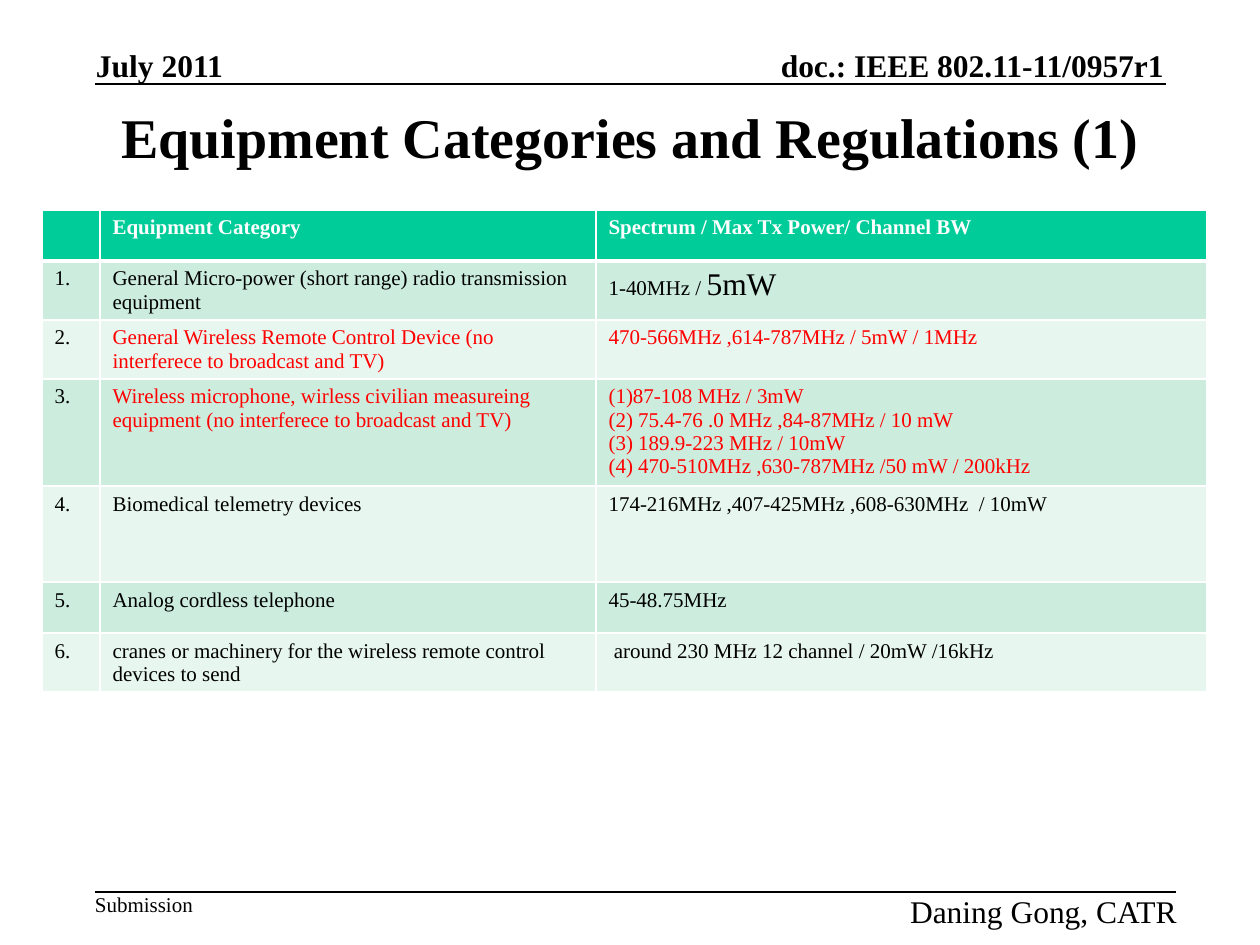
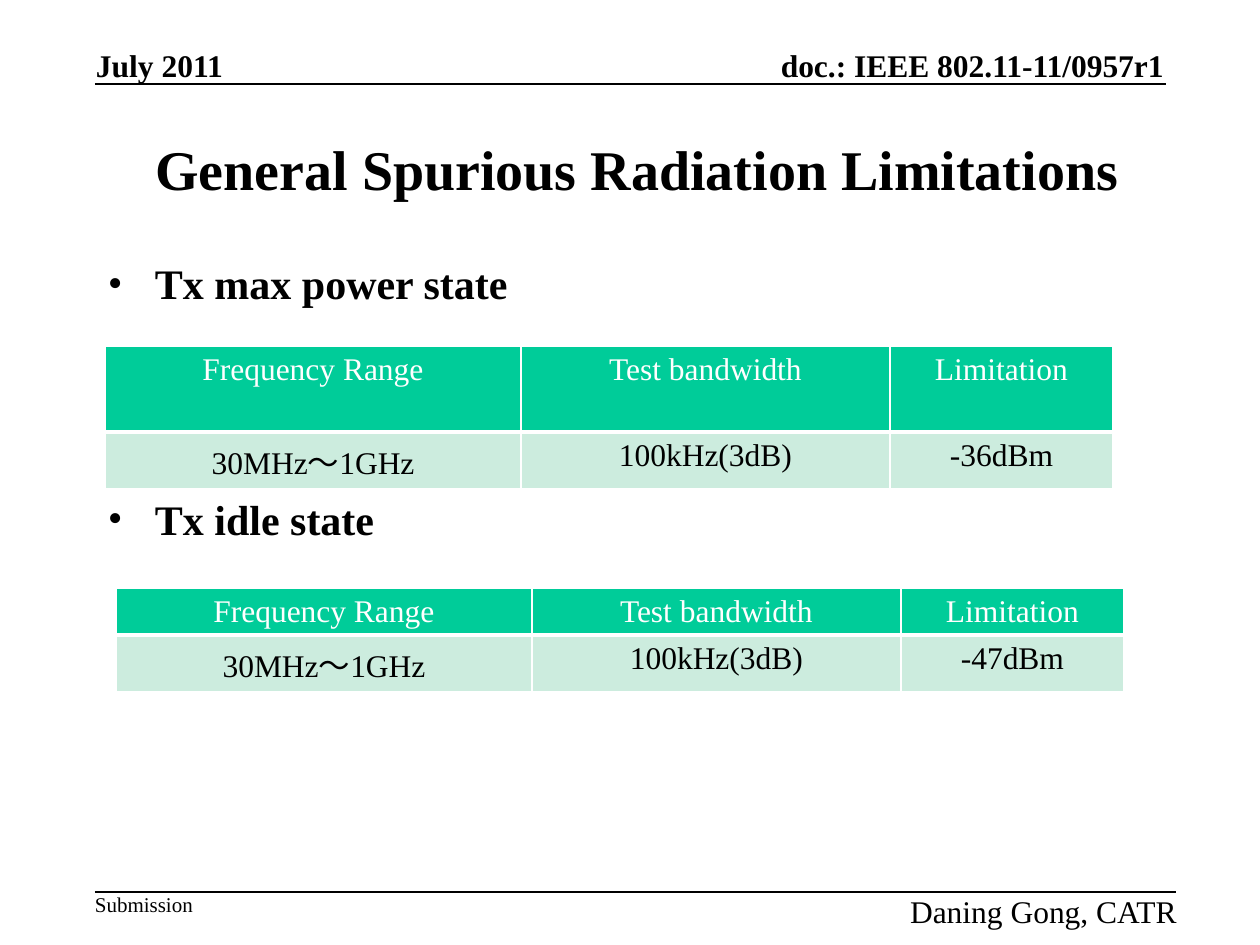
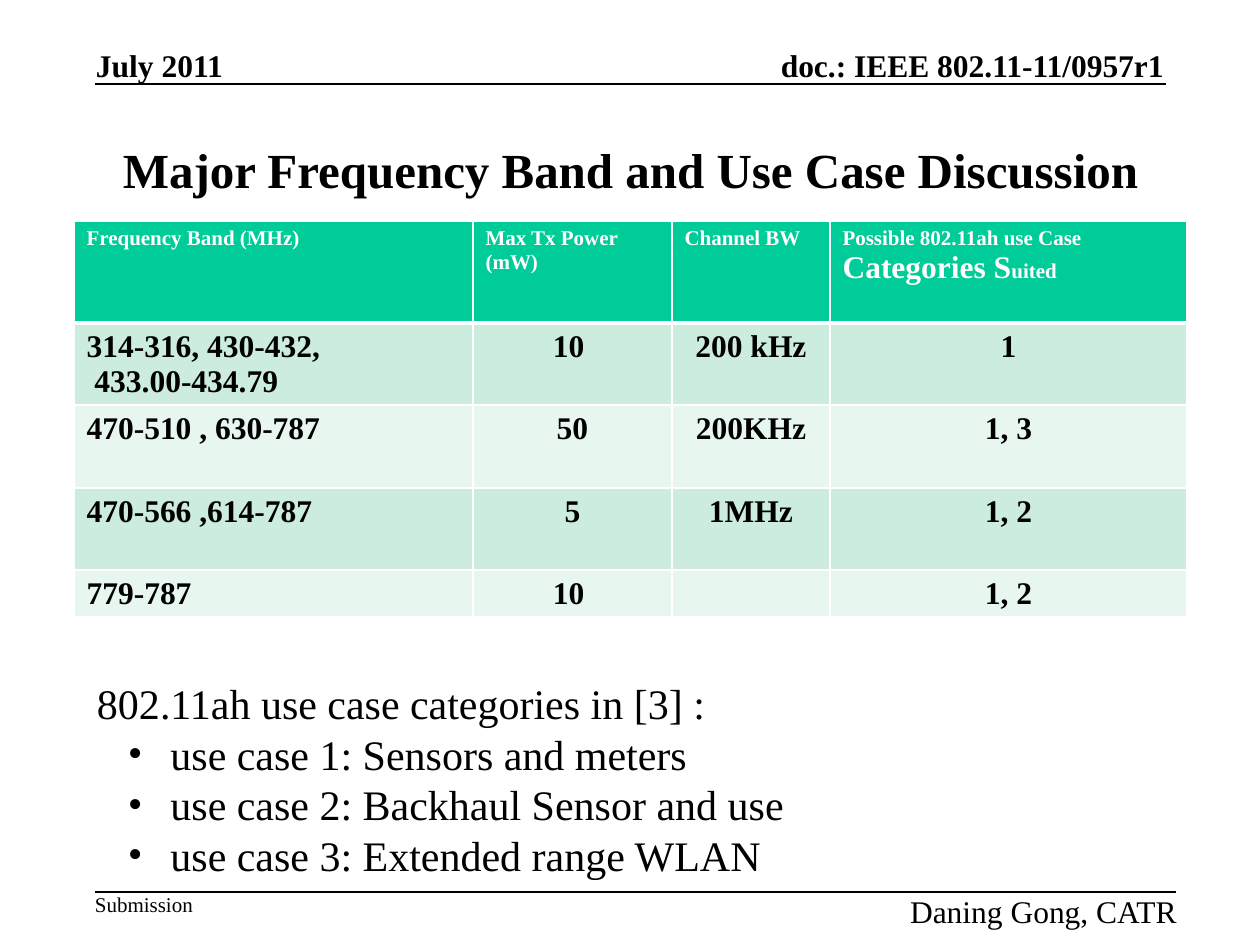
from itertools import product

from lxml import etree
from pptx import Presentation
from pptx.dml.color import RGBColor
from pptx.enum.shapes import MSO_CONNECTOR
from pptx.enum.text import MSO_ANCHOR as Anchor, PP_ALIGN as Align
from pptx.oxml.ns import qn
from pptx.util import Pt

PX = 914400 / 126
FONT = "Times New Roman"
BLACK = RGBColor(0x00, 0x00, 0x00)
WHITE = RGBColor(0xFF, 0xFF, 0xFF)
RED = RGBColor(0xFF, 0x00, 0x00)
GREEN = RGBColor(0x00, 0xCC, 0x99)
BANDS = (RGBColor(0xCC, 0xEC, 0xDE), RGBColor(0xE7, 0xF6, 0xEF))


def px(length):
    return round(length * PX)


def write(paragraph, text, size=18, color=BLACK, bold=False, align=Align.LEFT):
    """Write a string, or a sequence of (string, size) runs."""
    paragraph.alignment = align
    runs = [(text, size)] if isinstance(text, str) else text
    for words, points in runs:
        if words:
            run = paragraph.add_run()
            run.text = words
            font = run.font
            font.name, font.size, font.bold = FONT, Pt(points), bold
            font.color.rgb = color


def add_bullet(paragraph, left, hanging):
    props = paragraph._p.get_or_add_pPr()
    props.set("marL", str(px(left)))
    props.set("indent", str(-px(hanging)))
    etree.SubElement(props, qn("a:buFont"), typeface=FONT)
    etree.SubElement(props, qn("a:buChar"), char="•")


def add_border(cell, side, width):
    line = etree.SubElement(cell._tc.get_or_add_tcPr(), qn(f"a:ln{side}"), w=str(Pt(width)))
    fill = etree.SubElement(line, qn("a:solidFill"))
    etree.SubElement(fill, qn("a:srgbClr"), val=str(WHITE))


class Deck:
    def __init__(self):
        self.prs = Presentation()
        self.prs.slide_width, self.prs.slide_height = px(1260), px(945)
        self.slide = None

    def new_slide(self, title, title_top=95, title_size=32):
        self.slide = self.prs.slides.add_slide(self.prs.slide_layouts[6])
        # Header and footer
        self.text(96, 46, 130, 38, "July 2011", anchor=Anchor.BOTTOM, bold=True)
        self.text(713, 46, 451, 38, "doc.: IEEE 802.11-11/0957r1", anchor=Anchor.BOTTOM,
                  bold=True, align=Align.RIGHT)
        self.rule(95, 1166, 84)
        self.rule(95, 1176, 892)
        self.text(95, 892, 100, 25, "Submission", size=12)
        self.text(897, 892, 280, 38, "Daning Gong, CATR", align=Align.RIGHT)
        # Title
        self.text(95, title_top, 1071, 147, title, anchor=Anchor.MIDDLE, inset=(13, 6),
                  size=title_size, bold=True, align=Align.CENTER)

    def frame(self, left, top, width, height, anchor=Anchor.TOP, inset=(0, 0)):
        box = self.slide.shapes.add_textbox(px(left), px(top), px(width), px(height))
        frame = box.text_frame
        frame.word_wrap = True
        frame.vertical_anchor = anchor
        frame.margin_left = frame.margin_right = px(inset[0])
        frame.margin_top = frame.margin_bottom = px(inset[1])
        return frame

    def text(self, left, top, width, height, text, anchor=Anchor.TOP, inset=(0, 0), **style):
        frame = self.frame(left, top, width, height, anchor, inset)
        write(frame.paragraphs[0], text, **style)

    def listing(self, left, top, width, height, items, indent, intro=None, gap=0, bold=False):
        frame = self.frame(left, top, width, height, inset=(13, 6))
        lines = ([intro] if intro else []) + items
        for index, line in enumerate(lines):
            paragraph = frame.add_paragraph() if index else frame.paragraphs[0]
            paragraph.line_spacing = Pt(28.8)
            if index:
                paragraph.space_before = Pt(gap)
            if line != intro:
                add_bullet(paragraph, *indent)
            write(paragraph, line, size=24, bold=bold)

    def rule(self, left, right, y):
        line = self.slide.shapes.add_connector(
            MSO_CONNECTOR.STRAIGHT, px(left), px(y), px(right), px(y))
        line.line.color.rgb = BLACK
        line.line.width = Pt(1)
        etree.SubElement(line._element.spPr, qn("a:effectLst"))

    def table(self, left, top, widths, heights, rows, aligns, header_align=Align.LEFT,
              size=18, header_size=18, bold=False, header_bold=False, red_cells=()):
        table = self.slide.shapes.add_table(
            len(rows), len(widths), px(left), px(top), px(sum(widths)), px(sum(heights))).table
        for column, width in zip(table.columns, widths):
            column.width = px(width)
        for row, height in zip(table.rows, heights):
            row.height = px(height)
        for r, c in product(range(len(rows)), range(len(widths))):
            cell = table.cell(r, c)
            cell.margin_bottom = 0
            header = r == 0
            for side in "LRTB":
                thick = (r, side) in ((0, "B"), (1, "T"))
                add_border(cell, side, 3 if thick else 1)
            cell.fill.solid()
            cell.fill.fore_color.rgb = GREEN if header else BANDS[(r - 1) % 2]
            if header:
                style = dict(size=header_size, color=WHITE, bold=header_bold, align=header_align)
            else:
                color = RED if (r, c) in red_cells else BLACK
                style = dict(size=size, color=color, bold=bold, align=aligns[c])
            content = rows[r][c]
            lines = content.split("\n") if isinstance(content, str) else [content]
            frame = cell.text_frame
            for index, line in enumerate(lines):
                write(frame.add_paragraph() if index else frame.paragraphs[0], line, **style)


def equipment_slide(deck):
    deck.new_slide("Equipment Categories and Regulations (1)", title_top=63)
    equipment = [
        ("General Micro-power (short range) radio transmission equipment",
         (("1-40MHz / ", 12), ("5mW", 18))),
        ("General Wireless Remote Control Device (no interferece to broadcast and TV)",
         "470-566MHz ,614-787MHz / 5mW / 1MHz"),
        ("Wireless microphone, wirless civilian measureing equipment "
         "(no interferece to broadcast and TV)",
         "(1)87-108 MHz / 3mW\n(2) 75.4-76 .0 MHz ,84-87MHz / 10 mW\n"
         "(3) 189.9-223 MHz / 10mW\n(4) 470-510MHz ,630-787MHz /50 mW / 200kHz"),
        ("Biomedical telemetry devices", "174-216MHz ,407-425MHz ,608-630MHz  / 10mW"),
        ("Analog cordless telephone", "45-48.75MHz"),
        ("cranes or machinery for the wireless remote control devices to send",
         " around 230 MHz 12 channel / 20mW /16kHz"),
    ]
    rows = [("", "Equipment Category", "Spectrum / Max Tx Power/ Channel BW")]
    rows += [(f"{number}.", *entry) for number, entry in enumerate(equipment, 1)]
    deck.table(42, 210, (58, 496, 611), (51, 59, 59, 106, 96, 51, 59), rows,
               aligns=[Align.LEFT] * 3, size=12, header_size=12, header_bold=True,
               red_cells=list(product((2, 3), (1, 2))))


def spurious_slide(deck):
    deck.new_slide(" General Spurious Radiation Limitations")
    deck.listing(95, 252, 1071, 567, ["Tx max power state", "Tx idle state"],
                 indent=(47, 47), gap=105.5, bold=True)
    for left, top, header_height, limit in ((105, 346, 86, "-36dBm"), (116, 588, 47, "-47dBm")):
        rows = [("Frequency Range", "Test bandwidth", "Limitation"),
                ("30MHz～1GHz", "100kHz(3dB)", limit)]
        deck.table(left, top, (416, 369, 223), (header_height, 57), rows,
                   aligns=[Align.CENTER] * 3, header_align=Align.CENTER)


def use_case_slide(deck):
    deck.new_slide("Major Frequency Band and Use Case Discussion", title_size=28)
    rows = [
        ("Frequency Band (MHz)", "Max Tx Power (mW)", "Channel BW",
         (("Possible 802.11ah use Case ", 12), ("Categories S", 18), ("uited", 12))),
        ("314-316, 430-432,\n 433.00-434.79", "10 ", "200 kHz", "1"),
        ("470-510 , 630-787", "50", "200KHz", "1, 3"),
        ("470-566 ,614-787", "5", "1MHz", "1, 2"),
        ("779-787", "10 ", "", "1, 2"),
    ]
    deck.table(74, 221, (399, 199, 158, 357), (102, 82, 83, 82, 47), rows,
               aligns=[Align.LEFT] + [Align.CENTER] * 3, header_size=12,
               bold=True, header_bold=True)
    deck.listing(84, 672, 788, 217,
                 [" use case 1: Sensors and meters", " use case 2: Backhaul Sensor and use",
                  " use case 3: Extended range WLAN"],
                 indent=(63, 32), intro="802.11ah use case categories in [3] :")


def main():
    deck = Deck()
    equipment_slide(deck)
    spurious_slide(deck)
    use_case_slide(deck)
    deck.prs.save("out.pptx")


if __name__ == "__main__":
    main()
